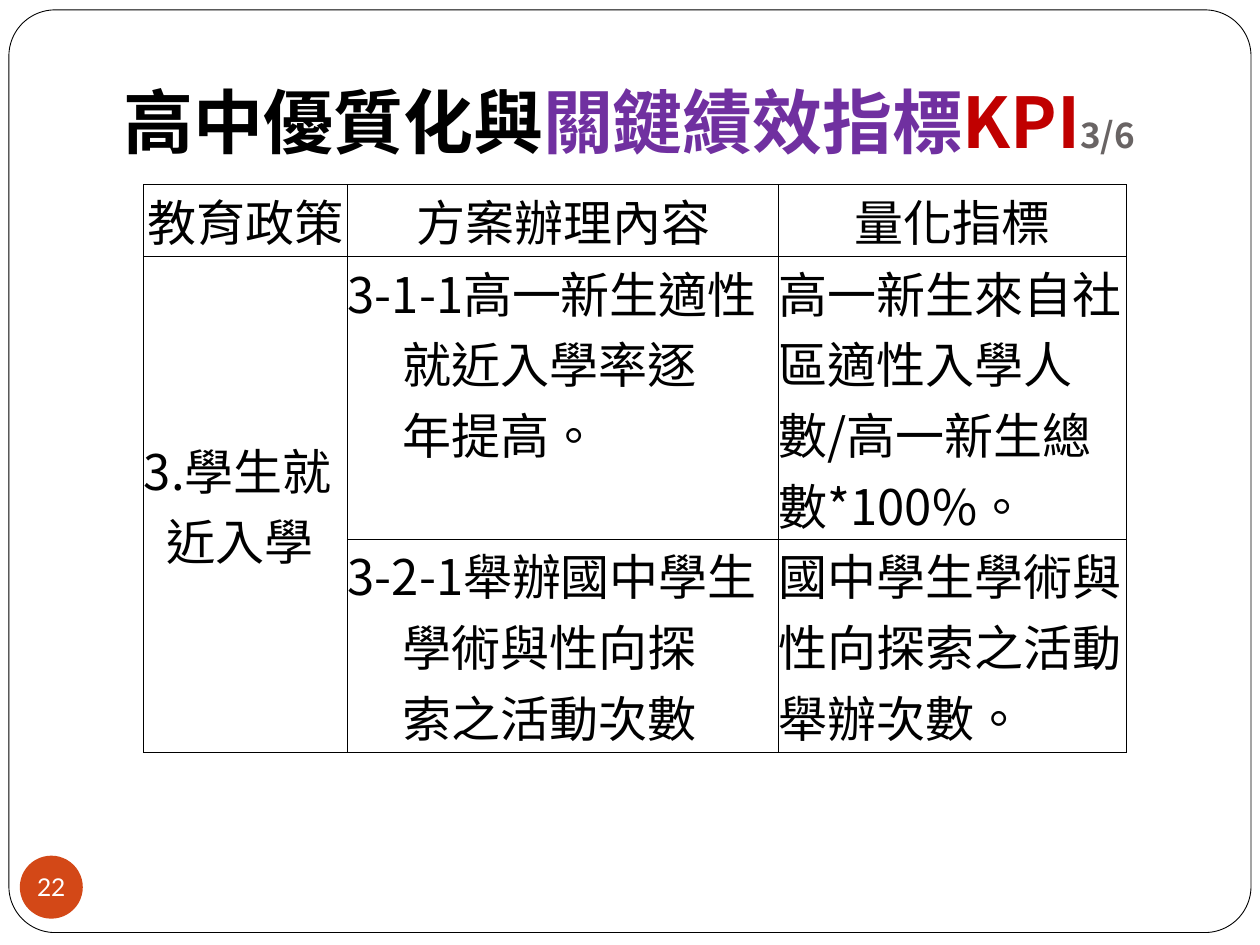
from lxml import etree
from pptx import Presentation
from pptx.dml.color import RGBColor
from pptx.enum.shapes import MSO_SHAPE
from pptx.enum.text import MSO_ANCHOR, PP_ALIGN
from pptx.oxml.ns import qn
from pptx.util import Cm, Pt

CENTER, LEFT = PP_ALIGN.CENTER, PP_ALIGN.LEFT
TOP, MIDDLE, BOTTOM = MSO_ANCHOR.TOP, MSO_ANCHOR.MIDDLE, MSO_ANCHOR.BOTTOM
CJK, LATIN = "Noto Sans CJK SC", "Lato"
BLACK, WHITE, ORANGE = "000000", "FFFFFF", "D34817"

TITLE = [("高中優質化與", 40, BLACK), ("關鍵績效指標", 40, "7030A0"),
         ("KPI", 40, "C00000"), ("3/6", 20, "696464")]
COL_WIDTHS = [4.11, 8.69, 7.01]
ROW_HEIGHTS = [1.45, 5.7, 4.29]
HEADERS = ["教育政策", "方案辦理內容", "量化指標"]
POLICY = ["3.學生就", "近入學"]
MEASURES = [
    (["3-1-1高一新生適性", "就近入學率逐", "年提高。"],
     ["高一新生來自社區適性入學人數/高一新生總數*100%。"]),
    (["3-2-1舉辦國中學生", "學術與性向探", "索之活動次數"],
     ["國中學生學術與性向探索之活動舉辦次數。"]),
]


def rgb(value):
    return RGBColor.from_string(value)


def set_font(p, name, size, color, bold=False):
    """Set the paragraph font for Latin and East Asian text alike."""
    font = p.font
    font.name, font.size, font.bold = name, Pt(size), bold
    font.color.rgb = rgb(color)
    def_rpr = p._p.pPr.find(qn("a:defRPr"))
    ea = etree.Element(qn("a:ea"), typeface=name)
    def_rpr.find(qn("a:latin")).addnext(ea)


def set_margins(tf, left, top, right, bottom):
    tf.margin_left, tf.margin_top = Cm(left), Cm(top)
    tf.margin_right, tf.margin_bottom = Cm(right), Cm(bottom)


def add_filled_shape(s, kind, box, fill):
    sp = s.shapes.add_shape(kind, *map(Cm, box))
    sp.shadow.inherit = False
    sp.fill.solid()
    sp.fill.fore_color.rgb = rgb(fill)
    return sp


def add_frame(s, box):
    sp = add_filled_shape(s, MSO_SHAPE.ROUNDED_RECTANGLE, box, WHITE)
    sp.adjustments[0] = 0.05
    sp.line.color.rgb = rgb(BLACK)
    sp.line.width = Pt(0.5)


def add_title(s, box):
    tf = s.shapes.add_textbox(*map(Cm, box)).text_frame
    tf.word_wrap = True
    tf.vertical_anchor = BOTTOM
    set_margins(tf, 0.25, 0.13, 0.25, 0.25)
    p = tf.paragraphs[0]
    set_font(p, CJK, 40, BLACK, bold=True)
    for text, size, color in TITLE:
        r = p.add_run()
        r.text = text
        r.font.size = Pt(size)
        r.font.color.rgb = rgb(color)


def add_borders(cell):
    tc_pr = cell._tc.get_or_add_tcPr()
    for side in ("lnL", "lnR", "lnT", "lnB"):
        ln = etree.SubElement(tc_pr, qn("a:" + side), w=str(Pt(0.5)))
        fill = etree.SubElement(ln, qn("a:solidFill"))
        etree.SubElement(fill, qn("a:srgbClr"), val=BLACK)


def fill_cell(cell, lines, align=LEFT, anchor=TOP, indent=0):
    """Write the lines, with every line after the first indented in cm."""
    set_margins(cell, 0, 0, 0, 0)
    cell.vertical_anchor = anchor
    tf = cell.text_frame
    for i, line in enumerate(lines):
        p = tf.add_paragraph() if i else tf.paragraphs[0]
        r = p.add_run()
        r.text = line
        # Traditional Chinese centres the full stop in its square
        r._r.get_or_add_rPr().set("lang", "zh-TW")
        p.alignment = align
        if i:
            p._p.get_or_add_pPr().set("marL", str(Cm(indent)))
        set_font(p, CJK, 28, BLACK)


def add_kpi_table(s, left, top):
    frame = s.shapes.add_table(len(ROW_HEIGHTS), len(COL_WIDTHS), Cm(left), Cm(top),
                               Cm(sum(COL_WIDTHS)), Cm(sum(ROW_HEIGHTS)))
    table = frame.table
    table.first_row = table.horz_banding = False
    for col, width in zip(table.columns, COL_WIDTHS):
        col.width = Cm(width)
    for row, height in zip(table.rows, ROW_HEIGHTS):
        row.height = Cm(height)
    for cell in table.iter_cells():
        add_borders(cell)
        cell.fill.background()
    for c, header in enumerate(HEADERS):
        fill_cell(table.cell(0, c), [header], CENTER, MIDDLE)
    table.cell(1, 0).merge(table.cell(2, 0))
    fill_cell(table.cell(1, 0), POLICY, anchor=MIDDLE, indent=0.46)
    for r, (content, indicator) in enumerate(MEASURES, start=1):
        fill_cell(table.cell(r, 1), content, indent=1.11)
        fill_cell(table.cell(r, 2), indicator)


def add_page_number(s, box, number):
    sp = add_filled_shape(s, MSO_SHAPE.OVAL, box, ORANGE)
    sp.line.fill.background()
    tf = sp.text_frame
    tf.word_wrap = False
    tf.vertical_anchor = MIDDLE
    set_margins(tf, 0, 0, 0, 0)
    p = tf.paragraphs[0]
    p.text = number
    p.alignment = CENTER
    set_font(p, LATIN, 14, WHITE)


def main():
    prs = Presentation()
    prs.slide_width, prs.slide_height = Cm(25.4), Cm(19.05)
    s = prs.slides.add_slide(prs.slide_layouts[6])
    add_frame(s, (0.18, 0.2, 25.04, 18.6))
    add_title(s, (2.24, 0.72, 21.6, 2.8))
    add_kpi_table(s, 2.9, 3.72)
    add_page_number(s, (0.4, 17.25, 1.27, 1.27), "22")
    prs.save("out.pptx")


if __name__ == "__main__":
    main()
